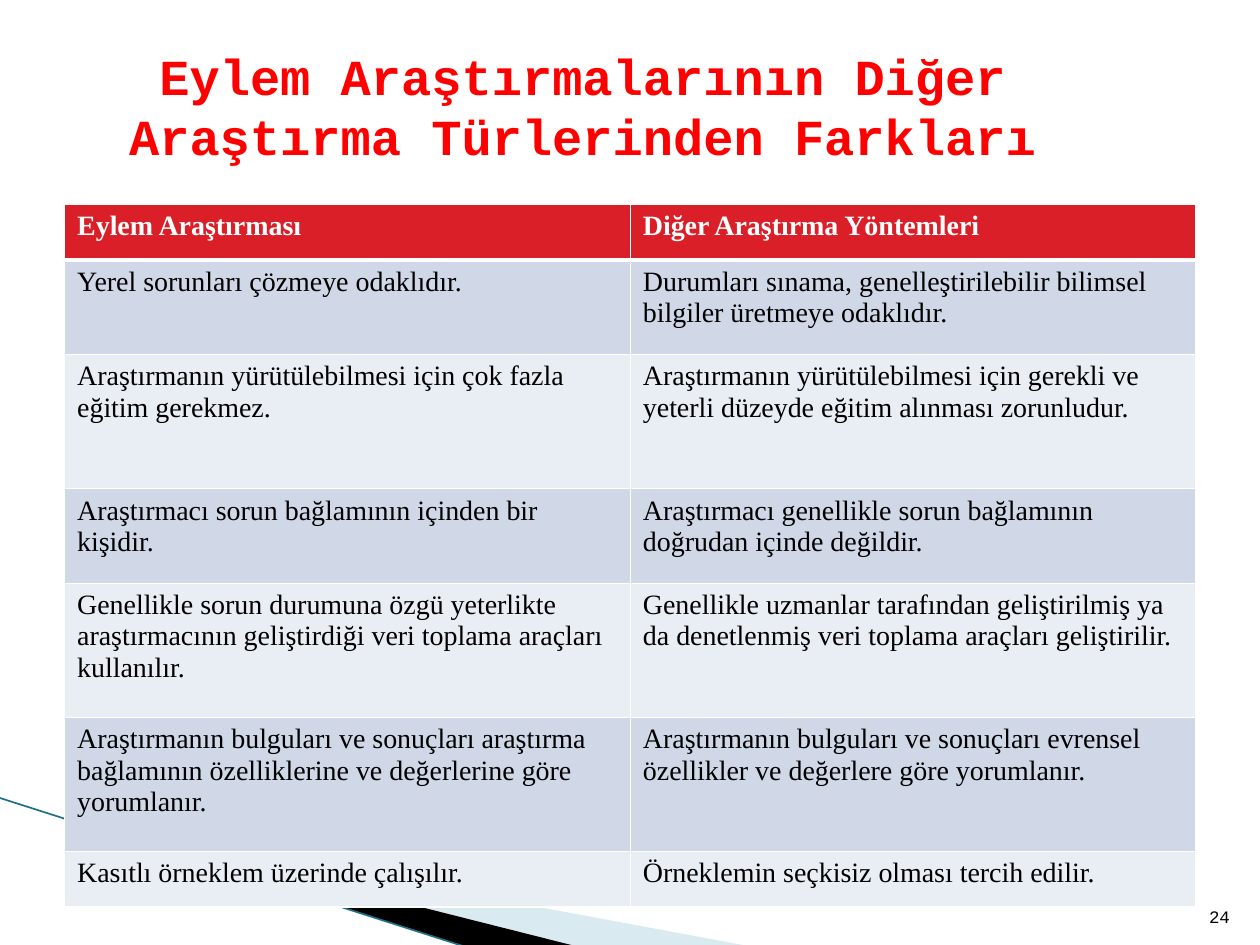
from dataclasses import dataclass

from lxml import etree
from pptx import Presentation
from pptx.dml.color import RGBColor
from pptx.enum.shapes import MSO_CONNECTOR
from pptx.enum.text import MSO_ANCHOR, PP_ALIGN
from pptx.oxml.ns import qn
from pptx.util import Pt

STRAIGHT = MSO_CONNECTOR.STRAIGHT
MIDDLE, BOTTOM = MSO_ANCHOR.MIDDLE, MSO_ANCHOR.BOTTOM
LEFT, CENTER, RIGHT = PP_ALIGN.LEFT, PP_ALIGN.CENTER, PP_ALIGN.RIGHT


@dataclass(frozen=True)
class Theme:
    title: str = "FF0000"
    header: str = "DA1F28"
    odd_row: str = "D0D8E8"
    even_row: str = "E9EDF4"
    white: str = "FFFFFF"
    black: str = "000000"
    pale_wave: str = "A0CBDC"
    wave_line: str = "1F7085"
    mono: str = "Courier New"
    serif: str = "Times New Roman"
    title_size: float = 28.8
    table_size: float = 16
    number_size: float = 10


@dataclass(frozen=True)
class Wave:
    points: tuple[tuple[float, float], ...]
    color: str
    opacity: int = 100


@dataclass(frozen=True)
class Comparison:
    action_research: str
    other_methods: str
    height: float


THEME = Theme()
SHORT, MEDIUM, TALL = 31.6, 54.2, 76.6
COLUMN_WIDTH = 323.3

WAVES = (
    Wave(((39.6, 468.5), (428.4, 540.7), (328.3, 540.7), (39.6, 468)),
         THEME.pale_wave, 40),
    Wave(((38.2, 467.3), (329, 540.7), (267.8, 541.4), (38.9, 468)),
         THEME.black),
)

COMPARISONS = (
    Comparison("Eylem Araştırması", "Diğer Araştırma Yöntemleri", SHORT),
    Comparison("Yerel sorunları çözmeye odaklıdır.",
               "Durumları sınama, genelleştirilebilir bilimsel bilgiler "
               "üretmeye odaklıdır.", MEDIUM),
    Comparison("Araştırmanın yürütülebilmesi için çok fazla eğitim gerekmez.",
               "Araştırmanın yürütülebilmesi için gerekli ve yeterli düzeyde "
               "eğitim alınması zorunludur.", TALL),
    Comparison("Araştırmacı sorun bağlamının içinden bir kişidir.",
               "Araştırmacı genellikle sorun bağlamının doğrudan içinde "
               "değildir.", MEDIUM),
    Comparison("Genellikle sorun durumuna özgü yeterlikte araştırmacının "
               "geliştirdiği veri toplama araçları kullanılır.",
               "Genellikle uzmanlar tarafından geliştirilmiş ya da denetlenmiş "
               "veri toplama araçları geliştirilir.", TALL),
    Comparison("Araştırmanın bulguları ve sonuçları araştırma bağlamının "
               "özelliklerine ve değerlerine göre yorumlanır.",
               "Araştırmanın bulguları ve sonuçları evrensel özellikler ve "
               "değerlere göre yorumlanır.", TALL),
    Comparison("Kasıtlı örneklem üzerinde çalışılır.",
               "Örneklemin seçkisiz olması tercih edilir.", SHORT),
)


def write_text(frame, text: str, *, font: str, size: float, color: str,
               bold: bool = False, align=LEFT) -> None:
    paragraph = frame.paragraphs[0]
    paragraph.alignment = align
    run = paragraph.add_run()
    run.text = text
    run.font.name = font
    run.font.size = Pt(size)
    run.font.bold = bold
    run.font.color.rgb = RGBColor.from_string(color)


def add_label(slide, text: str, box: tuple[float, ...], anchor,
              **text_format) -> None:
    frame = slide.shapes.add_textbox(*map(Pt, box)).text_frame
    frame.word_wrap = True
    frame.vertical_anchor = anchor
    write_text(frame, text, **text_format)


def draw_wave(slide, wave: Wave) -> None:
    start, *others = [(Pt(x), Pt(y)) for x, y in wave.points]
    builder = slide.shapes.build_freeform(*start)
    builder.add_line_segments(others, close=True)
    shape = builder.convert_to_shape()
    shape.shadow.inherit = False
    shape.line.fill.background()
    shape.fill.solid()
    shape.fill.fore_color.rgb = RGBColor.from_string(wave.color)
    if wave.opacity < 100:
        color = shape.fill._xPr.find(qn("a:solidFill"))[0]
        etree.SubElement(color, qn("a:alpha"), val=str(wave.opacity * 1000))


def draw_wave_line(slide) -> None:
    line = slide.shapes.add_connector(STRAIGHT, Pt(-0.7), Pt(455.8),
                                      Pt(267.1), Pt(541.4))
    line.line.width = Pt(0.95)
    line.line.color.rgb = RGBColor.from_string(THEME.wave_line)
    etree.SubElement(line._element.spPr, qn("a:effectLst"))


def set_borders(cell, row: int) -> None:
    widths = {"L": 1, "R": 1, "T": 3 if row == 1 else 1,
              "B": 3 if row == 0 else 1}
    properties = cell._tc.get_or_add_tcPr()
    for side, width in widths.items():
        border = etree.SubElement(properties, qn(f"a:ln{side}"),
                                  w=str(Pt(width)))
        fill = etree.SubElement(border, qn("a:solidFill"))
        etree.SubElement(fill, qn("a:srgbClr"), val=THEME.white)


def draw_comparisons(slide, comparisons: tuple[Comparison, ...]) -> None:
    height = sum(comparison.height for comparison in comparisons)
    table = slide.shapes.add_table(len(comparisons), 2, Pt(36.9), Pt(116.9),
                                   Pt(2 * COLUMN_WIDTH), Pt(height)).table
    for column in table.columns:
        column.width = Pt(COLUMN_WIDTH)
    for row, comparison in enumerate(comparisons):
        table.rows[row].height = Pt(comparison.height)
        is_header = row == 0
        band = THEME.odd_row if row % 2 else THEME.even_row
        texts = (comparison.action_research, comparison.other_methods)
        for cell, text in zip(table.rows[row].cells, texts):
            set_borders(cell, row)
            cell.fill.solid()
            cell.fill.fore_color.rgb = RGBColor.from_string(
                THEME.header if is_header else band)
            write_text(cell.text_frame, text, font=THEME.serif,
                       size=THEME.table_size, bold=is_header,
                       color=THEME.white if is_header else THEME.black)


def main() -> None:
    presentation = Presentation()
    presentation.slide_width, presentation.slide_height = Pt(720), Pt(540)
    slide = presentation.slides.add_slide(presentation.slide_layouts[6])

    # Corner decoration
    for wave in WAVES:
        draw_wave(slide, wave)
    draw_wave_line(slide)

    # Slide number and title
    add_label(slide, "24", (681.1, 504.7, 28.8, 28.8), BOTTOM,
              font=THEME.mono, size=THEME.number_size, color=THEME.black,
              align=RIGHT)
    add_label(slide, "Eylem Araştırmalarının Diğer Araştırma Türlerinden Farkları",
              (0, 37.4, 666, 45.4), MIDDLE, font=THEME.mono,
              size=THEME.title_size, color=THEME.title, bold=True, align=CENTER)

    # Comparison table
    draw_comparisons(slide, COMPARISONS)

    presentation.save("out.pptx")


if __name__ == "__main__":
    main()
